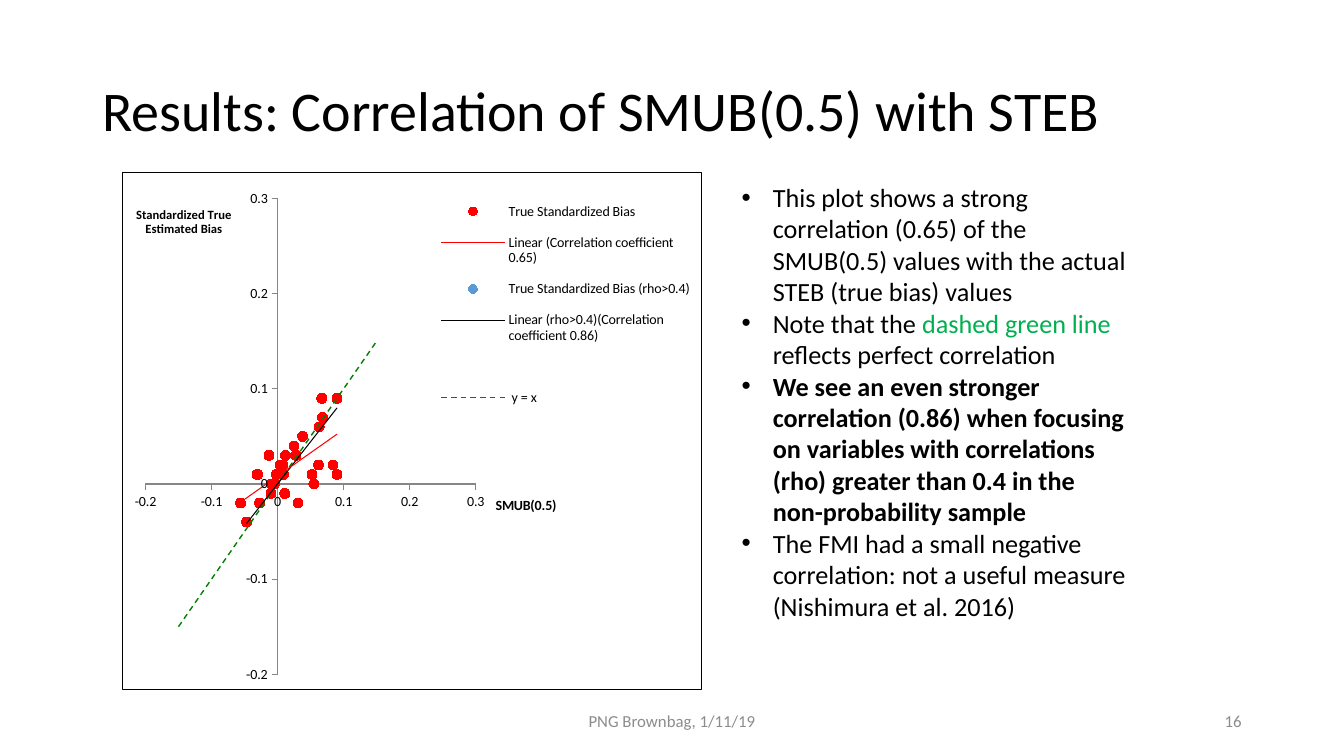
from lxml.etree import fromstring
from pptx import Presentation
from pptx.chart.data import XyChartData
from pptx.dml.color import RGBColor
from pptx.enum.chart import XL_CHART_TYPE, XL_LEGEND_POSITION, XL_MARKER_STYLE, XL_TICK_MARK
from pptx.enum.text import MSO_ANCHOR, PP_ALIGN
from pptx.oxml import parse_xml
from pptx.oxml.ns import nsdecls, qn
from pptx.util import Inches, Pt

COLORS = {"text": "000000", "muted": "8C8C8C", "green": "00B050", "red": "FF0000",
          "blue": "5B9BD5", "dash": "008000", "axis": "868686"}
COLUMNS, ROWS = 160, 90

# Plot data: the first STRONG points are those with rho > 0.4
BIAS_POINTS = [
    (0.068, 0.07), (0.09, 0.09), (-0.047, -0.04), (-0.027, -0.02), (-0.005, 0), (0.055, 0),
    (0.025, 0.04), (0.031, -0.02), (0.067, 0.09), (0.004, 0.02), (-0.01, -0.01), (0.063, 0.06),
    (0.084, 0.02), (-0.056, -0.02), (0.062, 0.02), (0.052, 0.01), (0.09, 0.01), (0.028, 0.03),
    (0.038, 0.05), (-0.009, 0), (0.012, 0.03), (-0.002, 0.01), (-0.03, 0.01), (-0.013, 0.03),
    (0.008, 0.02), (-0.031, 0.01), (0.011, -0.01), (0.009, 0.01)]
STRONG = 12
IDENTITY_POINTS = [(value, value) for value in (0.1, -0.1, 0.15, -0.15)]

# Series name, points, marker color, trend name, trend color, trend width, trend dash
SERIES = [
    ("True Standardized Bias", BIAS_POINTS, "red",
     "Linear (Correlation coefficient 0.65)", "red", 0.75, "solid"),
    ("True Standardized Bias (rho>0.4)", BIAS_POINTS[:STRONG], "blue",
     "Linear (rho>0.4)(Correlation coefficient 0.86)", "text", 0.75, "solid"),
    (" ", IDENTITY_POINTS, None, " y = x", "dash", 1, "dash")]

BULLETS = [
    [("This plot shows a strong correlation (0.65) of the SMUB(0.5) values with the actual "
      "STEB (true bias) values", {})],
    [("Note that the ", {}), ("dashed green line ", {"color": "green"}),
     ("reflects perfect correlation", {})],
    [("We see an even stronger correlation (0.86) when focusing on variables with correlations "
      "(rho) greater than 0.4 in the non-probability sample", {"bold": True})],
    [("The FMI had a small negative correlation: not a useful measure "
      "(Nishimura et al. 2016)", {})]]


def apply(target, values):
    for name, value in values.items():
        setattr(target, name, value)


def line_xml(color, width, dash="solid"):
    return (f'<c:spPr {nsdecls("c", "a")}><a:ln w="{Pt(width)}"><a:solidFill>'
            f'<a:srgbClr val="{COLORS[color]}"/></a:solidFill>'
            f'<a:prstDash val="{dash}"/></a:ln></c:spPr>')


def set_layout(element, index, left, top, width=None, height=None, inner=False):
    """Place a chart part by shares of the chart's size."""
    for old in element.findall(qn("c:layout")):
        element.remove(old)
    target = '<c:layoutTarget val="inner"/>' if inner else ""
    modes = '<c:xMode val="edge"/><c:yMode val="edge"/>'
    sizes = "".join(f'<c:{tag} val="{value}"/>' for tag, value in
                    zip("xywh", (left, top, width, height)) if value is not None)
    element.insert(index, parse_xml(f'<c:layout {nsdecls("c")}><c:manualLayout>'
                                    f'{target}{modes}{sizes}</c:manualLayout></c:layout>'))


class SlideBuilder:
    font_name = "Calibri"

    def __init__(self, deck):
        self.slide = deck.slides.add_slide(deck.slide_layouts[6])
        self.column = deck.slide_width / COLUMNS
        self.row = deck.slide_height / ROWS

    def area(self, left, top, width, height):
        return (int(left * self.column), int(top * self.row),
                int(width * self.column), int(height * self.row))

    def style(self, font, size, color="text", bold=False):
        apply(font, {"name": self.font_name, "size": Pt(size), "bold": bold})
        font.color.rgb = RGBColor.from_string(COLORS[color])

    def text(self, place, paragraphs, size, color="text", align=PP_ALIGN.LEFT,
             anchor=MSO_ANCHOR.MIDDLE, spacing=1.0, bullets=False):
        frame = self.slide.shapes.add_textbox(*self.area(*place)).text_frame
        apply(frame, {"word_wrap": True, "vertical_anchor": anchor})
        for number, spans in enumerate(paragraphs):
            para = frame.add_paragraph() if number else frame.paragraphs[0]
            apply(para, {"alignment": align, "line_spacing": spacing})
            if bullets:
                self.bullet(para)
            for words, changes in spans:
                span = para.add_run()
                span.text = words
                self.style(span.font, **{"size": size, "color": color, **changes})

    def bullet(self, para):
        properties = para._p.get_or_add_pPr()
        properties.set("marL", str(Inches(0.31)))
        properties.set("indent", str(-Inches(0.31)))
        for child in ('<a:buFont %s typeface="Arial"/>', '<a:buChar %s char="•"/>'):
            properties.append(fromstring(child % nsdecls("a")))

    def scatter(self, place, series_rows):
        data = XyChartData()
        for name, points, *_ in series_rows:
            series = data.add_series(name)
            for point in points:
                series.add_data_point(*point)
        chart = self.slide.shapes.add_chart(
            XL_CHART_TYPE.XY_SCATTER, *self.area(*place), data).chart
        chart.has_title = False
        self.style(chart.font, 10)
        chart.plots[0].vary_by_categories = False
        for series, row in zip(chart.plots[0].series, series_rows):
            self.series(series, *row[2:])
        self.frame(chart)
        return chart

    def series(self, series, marker_color, trend_name, *trend_line):
        series.format.line.fill.background()
        marker = series.marker
        if marker_color:
            apply(marker, {"style": XL_MARKER_STYLE.CIRCLE, "size": 7})
            marker.format.fill.solid()
            marker.format.fill.fore_color.rgb = RGBColor.from_string(COLORS[marker_color])
        else:
            marker.style = XL_MARKER_STYLE.NONE
        marker.format.line.fill.background()
        trend = parse_xml(
            f'<c:trendline {nsdecls("c")}><c:name>{trend_name}</c:name>{line_xml(*trend_line)}'
            '<c:trendlineType val="linear"/><c:dispRSqr val="0"/><c:dispEq val="0"/>'
            '</c:trendline>')
        series._element.find(qn("c:xVal")).addprevious(trend)

    def frame(self, chart):
        space = chart._chartSpace
        body = space.find(qn("c:chart"))
        body.addprevious(parse_xml(f'<c:roundedCorners {nsdecls("c")} val="0"/>'))
        body.addnext(parse_xml(line_xml("text", 0.75)))

    def axis(self, axis, title, size, left, top):
        apply(axis, {"minimum_scale": -0.2, "maximum_scale": 0.3, "major_unit": 0.1,
                     "has_major_gridlines": False, "major_tick_mark": XL_TICK_MARK.OUTSIDE,
                     "minor_tick_mark": XL_TICK_MARK.NONE})
        apply(axis.tick_labels, {"number_format": "General", "number_format_is_linked": False})
        axis.format.line.color.rgb = RGBColor.from_string(COLORS["axis"])
        frame = axis.axis_title.text_frame
        frame.text = title
        self.style(frame.paragraphs[0].runs[0].font, size, bold=True)
        body = frame._txBody.find(qn("a:bodyPr"))
        body.set("rot", "0")
        body.set("vert", "horz")
        set_layout(axis.axis_title._element, 1, left, top)

    def legend(self, chart, *place):
        chart.has_legend = True
        apply(chart.legend, {"position": XL_LEGEND_POSITION.CORNER, "include_in_layout": False})
        set_layout(chart.legend._element, 1, *place)


def main():
    deck = Presentation()
    apply(deck, {"slide_width": Inches(13.33), "slide_height": Inches(7.5)})
    page = SlideBuilder(deck)

    # Title
    page.text((11, 4.8, 138, 17.4), [[("Results: Correlation of SMUB(0.5) with STEB", {})]],
              40, spacing=0.9)

    # Scatter chart with trend lines
    chart = page.scatter((14.5, 20.5, 69.1, 61.7), SERIES)
    set_layout(chart._chartSpace.chart.plotArea, 0, 0.04, 0.05, 0.57, 0.92, inner=True)
    page.axis(chart.category_axis, "SMUB(0.5)", 10, 0.64, 0.62)
    page.axis(chart.value_axis, "Standardized True Estimated Bias", 9, 0.02, 0.06)
    page.legend(chart, 0.55, 0.03, 0.43, 0.45)

    # Findings
    page.text((87.1, 21, 48.7, 58.6), BULLETS, 18.7, anchor=MSO_ANCHOR.TOP, bullets=True)

    # Footer
    page.text((53, 83.4, 54, 4.8), [[("PNG Brownbag, 1/11/19", {})]], 12, "muted",
              PP_ALIGN.CENTER)
    page.text((113, 83.4, 36, 4.8), [[("16", {})]], 12, "muted", PP_ALIGN.RIGHT)
    deck.save("out.pptx")


if __name__ == "__main__":
    main()
